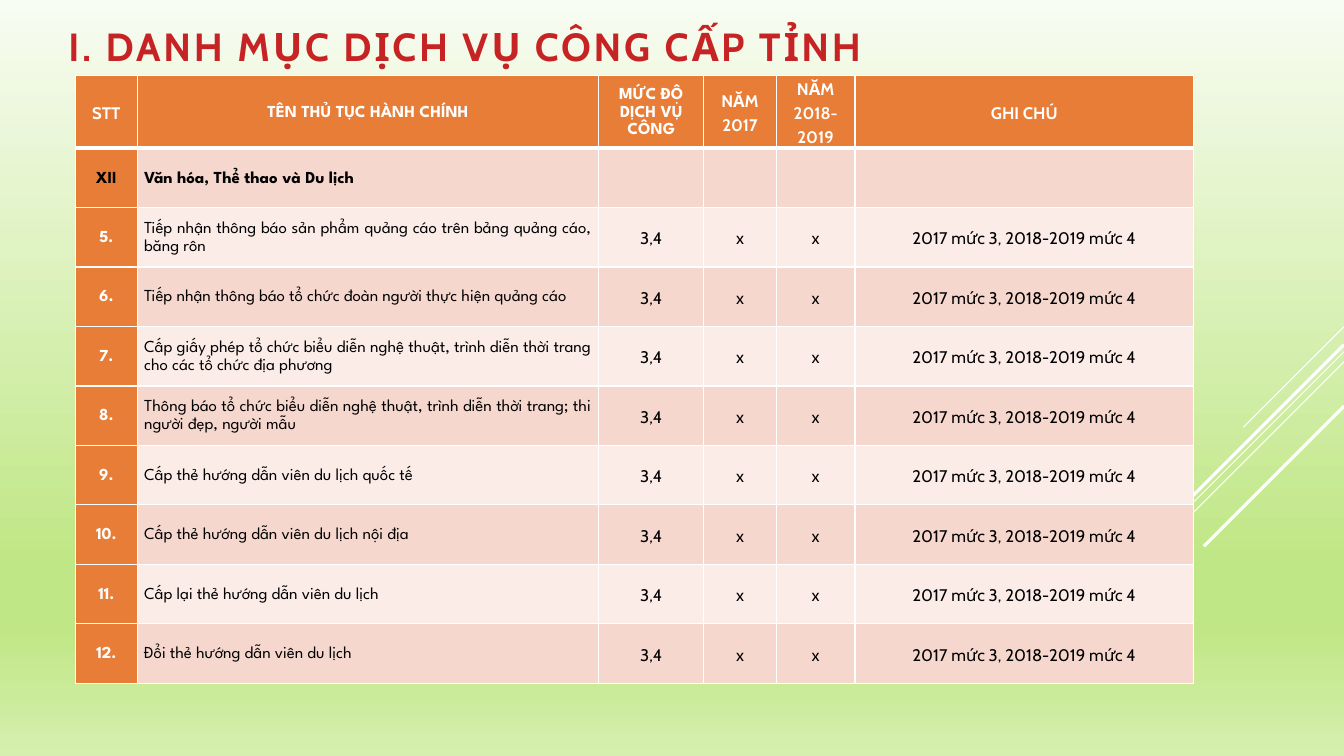
from lxml import etree
from pptx import Presentation
from pptx.dml.color import RGBColor
from pptx.enum import shapes, text
from pptx.oxml.ns import qn
from pptx.util import Inches, Pt

WHITE = RGBColor(0xFF, 0xFF, 0xFF)
BLACK = RGBColor(0, 0, 0)
RED = RGBColor(0xC6, 0x23, 0x24)
ORANGE = RGBColor(0xE8, 0x7D, 0x37)
DARK_BAND = RGBColor(0xF6, 0xD7, 0xCE)
LIGHT_BAND = RGBColor(0xFB, 0xEC, 0xE8)
SKY = RGBColor(0xF8, 0xFC, 0xF2)
GREEN = RGBColor(0xC0, 0xE7, 0x86)
PALE_GREEN = RGBColor(0xD5, 0xEF, 0xAE)
CENTER, JUSTIFY, LEFT = text.PP_ALIGN.CENTER, text.PP_ALIGN.JUSTIFY, text.PP_ALIGN.LEFT


def write(frame, wording, font="Cabin", size=12, color=BLACK, bold=False,
          align=CENTER, line_spacing=1.15, gap=0):
    paragraph = frame.paragraphs[0]
    paragraph.alignment = align
    paragraph.line_spacing = line_spacing
    paragraph.space_before = paragraph.space_after = Pt(gap)
    run = paragraph.add_run()
    run.text = wording
    run.font.name = font
    run.font.size = Pt(size)
    run.font.bold = bold
    run.font.color.rgb = color
    return run


def add_border(cell, side, points):
    properties = cell._tc.get_or_add_tcPr()
    line = etree.SubElement(properties, qn(f"a:ln{side}"), w=str(Pt(points)))
    fill = etree.SubElement(line, qn("a:solidFill"))
    etree.SubElement(fill, qn("a:srgbClr"), val=str(WHITE))


presentation = Presentation()
presentation.slide_width = Inches(13.33)
presentation.slide_height = Inches(7.5)
slide = presentation.slides.add_slide(presentation.slide_layouts[6])

background = slide.background.fill
background.gradient()
background.gradient_angle = 270
stops = slide.element.find(".//" + qn("a:gsLst"))
stops.clear()
for percent, color in [(0, SKY), (74, GREEN), (83, GREEN), (100, PALE_GREEN)]:
    stop = etree.SubElement(stops, qn("a:gs"), pos=str(percent * 1000))
    etree.SubElement(stop, qn("a:srgbClr"), val=str(color))

for top, run_length, weight in [(3.24, 1, 0.75), (3.49, 3.26, 0.75), (3.59, 2.07, 0.75),
                                (3.42, 1.91, 2.25), (4.03, 1.39, 2.25)]:
    ray = slide.shapes.add_connector(
        shapes.MSO_CONNECTOR.STRAIGHT, Inches(13.33), Inches(top),
        Inches(13.33 - run_length), Inches(top + run_length))
    ray.line.color.rgb = WHITE
    ray.line.width = Pt(weight)
    etree.SubElement(ray._element.spPr, qn("a:effectLst"))

title = slide.shapes.add_textbox(Inches(0.58), Inches(0.22), Inches(11.13), Inches(0.53))
title.text_frame.word_wrap = True
title.text_frame.vertical_anchor = text.MSO_ANCHOR.MIDDLE
title_run = write(title.text_frame, "I. DANH MỤC DỊCH VỤ CÔNG CẤP TỈNH", size=28,
                  color=RED, bold=True, align=LEFT, line_spacing=0.9)
title_run.font._element.set("spc", "200")

headings = ["STT", "TÊN THỦ TỤC HÀNH CHÍNH", "MỨC ĐỘ DỊCH VỤ CÔNG",
            "NĂM 2017", "NĂM 2018-2019", "GHI CHÚ"]
procedures = [
    "Tiếp nhận thông báo sản phẩm quảng cáo trên bảng quảng cáo, băng rôn",
    "Tiếp nhận thông báo tổ chức đoàn người thực hiện quảng cáo",
    "Cấp giấy phép tổ chức biểu diễn nghệ thuật, trình diễn thời trang cho các tổ chức địa phương",
    "Thông báo tổ chức biểu diễn nghệ thuật, trình diễn thời trang; thi người đẹp, người mẫu",
    "Cấp thẻ hướng dẫn viên du lịch quốc tế",
    "Cấp thẻ hướng dẫn viên du lịch nội địa",
    "Cấp lại thẻ hướng dẫn viên du lịch",
    "Đổi thẻ hướng dẫn viên du lịch",
]
rows = [headings, ["XII", "Văn hóa, Thể thao và Du lịch", "", "", "", ""]]
for number, procedure in enumerate(procedures, start=5):
    rows.append([f"{number}.", procedure, "3,4", "x", "x", "2017 mức 3, 2018-2019 mức 4"])

table = slide.shapes.add_table(len(rows), len(headings), Inches(0.75), Inches(0.75),
                               Inches(11.11), Inches(6.03)).table
table.horz_banding = False
for column, width in zip(table.columns, [0.61, 4.58, 1.04, 0.72, 0.78, 3.36]):
    column.width = Inches(width)

for row_index, row in enumerate(rows):
    is_header = row_index == 0
    is_section = row_index == 1
    table.rows[row_index].height = Inches(0.72 if is_header else 0.59)
    band = DARK_BAND if row_index % 2 else LIGHT_BAND
    for column_index, wording in enumerate(row):
        cell = table.cell(row_index, column_index)
        is_number = column_index == 0
        is_name = column_index == 1
        cell.margin_left = cell.margin_right = Inches(0.07)
        cell.margin_top = cell.margin_bottom = 0
        cell.vertical_anchor = text.MSO_ANCHOR.MIDDLE
        for side in "LRTB":
            below_header = (is_header and side == "B") or (is_section and side == "T")
            add_border(cell, side, 3 if below_header else 1)
        cell.fill.solid()
        cell.fill.fore_color.rgb = ORANGE if is_header or is_number else band
        if not wording:
            continue
        spartan = column_index in (1, 2) if is_header else column_index < 2
        white = is_header or (is_number and not is_section)
        write(cell.text_frame, wording,
              font="League Spartan" if spartan else "Cabin",
              color=WHITE if white else BLACK,
              bold=is_header or is_section or is_number,
              align=JUSTIFY if is_name and not is_header else CENTER,
              gap=6 if spartan and not is_header else 0)

presentation.save("out.pptx")
